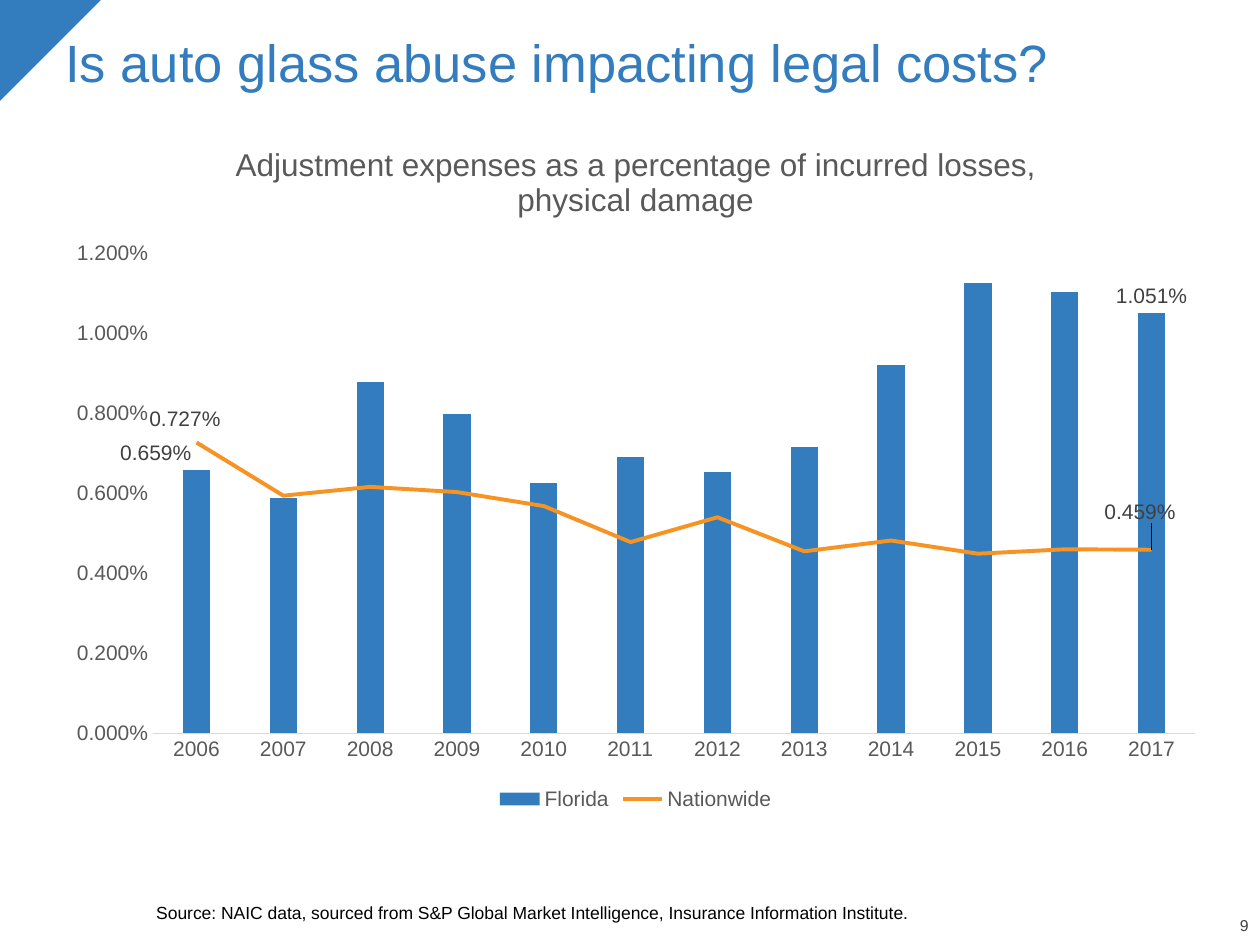
from dataclasses import dataclass

from lxml import etree
from pptx import Presentation
from pptx import util as u
from pptx.chart.data import CategoryChartData
from pptx.dml.color import RGBColor
from pptx.enum import chart as ch
from pptx.enum import shapes, text
from pptx.oxml import parse_xml
from pptx.oxml.ns import nsdecls, qn

BLUE = RGBColor(0x33, 0x7D, 0xBE)
ORANGE = RGBColor(0xF6, 0x93, 0x22)
BLACK = RGBColor(0, 0, 0)
DARK = RGBColor(0x40, 0x40, 0x40)
GREY = RGBColor(0x59, 0x59, 0x59)
PALE = RGBColor(0xD9, 0xD9, 0xD9)
FONT = "Arial"
PERCENT = "0.000%"
WIDTH, HEIGHT = u.Inches(10), u.Inches(7.5)


@dataclass
class Caption:
    words: str
    box: tuple[float, float, float, float]  # inches
    size: float
    color: RGBColor
    anchor: text.MSO_ANCHOR = text.MSO_ANCHOR.BOTTOM
    align: text.PP_ALIGN = text.PP_ALIGN.LEFT
    insets: tuple[float, float] = (0, 0)  # side, top and bottom


@dataclass
class PointLabel:
    series: int
    point: int
    position: ch.XL_LABEL_POSITION
    shift: tuple[float, float]  # shares of the chart's size


CAPTIONS = [
    Caption("9", (9.43, 7.29, 0.48, 0.13), 9, DARK, align=text.PP_ALIGN.RIGHT),
    Caption("Is auto glass abuse impacting legal costs?", (0.42, 0.25, 9.25, 1.04),
            30, BLUE, text.MSO_ANCHOR.TOP, insets=(0.1, 0.05)),
    Caption("Source: NAIC data, sourced from S&P Global Market Intelligence, "
            "Insurance Information Institute.", (1.24, 6.88, 8.4, 0.45), 10, BLACK),
]
YEARS = [str(year) for year in range(2006, 2018)]
EXPENSES = {
    "Florida": [0.00659, 0.00587, 0.00878, 0.00799, 0.00625, 0.00691,
                0.00653, 0.00715, 0.0092, 0.01125, 0.01103, 0.01051],
    "Nationwide": [0.00727, 0.00594, 0.00616, 0.00603, 0.00568, 0.00478,
                   0.0054, 0.00455, 0.00482, 0.00449, 0.0046, 0.00459],
}
OUTSIDE, ABOVE = ch.XL_LABEL_POSITION.OUTSIDE_END, ch.XL_LABEL_POSITION.ABOVE
POINT_LABELS = [
    PointLabel(0, 0, OUTSIDE, (-0.035, 0)),
    PointLabel(0, 11, OUTSIDE, (0, 0)),
    PointLabel(1, 0, ABOVE, (-0.01, -0.01)),
    PointLabel(1, 11, ABOVE, (-0.01, -0.03)),
]


def style_font(font, size: float, color: RGBColor) -> None:
    font.name, font.size, font.bold = FONT, u.Pt(size), False
    font.color.rgb = color


def add_caption(slide, caption: Caption) -> None:
    frame = slide.shapes.add_textbox(*map(u.Inches, caption.box)).text_frame
    frame.word_wrap = True
    frame.vertical_anchor = caption.anchor
    side, edge = map(u.Inches, caption.insets)
    frame.margin_left = frame.margin_right = side
    frame.margin_top = frame.margin_bottom = edge
    frame.text = caption.words
    line = frame.paragraphs[0]
    line.alignment, line.line_spacing = caption.align, 0.9
    style_font(line.runs[0].font, caption.size, caption.color)


def manual_layout(x: float, y: float, size: tuple[float, float] | None = None):
    """Plot-area layout when a size is given, otherwise a label offset."""
    parts = {"x": x, "y": y}
    if size:
        parts = {"layoutTarget": "inner", "xMode": "edge", "yMode": "edge",
                 **parts, "w": size[0], "h": size[1]}
    inner = "".join(f'<c:{tag} val="{val}"/>' for tag, val in parts.items())
    return parse_xml(f"<c:layout {nsdecls('c')}><c:manualLayout>{inner}"
                     "</c:manualLayout></c:layout>")


def move_to_line_plot(bars, ser) -> None:
    """Put a column series into a line plot on the same axes."""
    line_plot = parse_xml(f'<c:lineChart {nsdecls("c")}><c:grouping val="standard"/>'
                          '<c:varyColors val="0"/></c:lineChart>')
    for column_only in ser.findall(qn("c:invertIfNegative")):
        ser.remove(column_only)
    line_plot.append(ser)
    etree.SubElement(line_plot, qn("c:marker")).set("val", "1")
    for axis in bars.findall(qn("c:axId")):
        etree.SubElement(line_plot, qn("c:axId")).set("val", axis.get("val"))
    bars.addnext(line_plot)


def style_axis(axis) -> None:
    axis.has_major_gridlines = False
    axis.major_tick_mark = axis.minor_tick_mark = ch.XL_TICK_MARK.NONE
    style_font(axis.tick_labels.font, 12, GREY)


def add_expense_chart(slide) -> None:
    data = CategoryChartData(number_format=PERCENT)
    data.categories = YEARS
    for name, values in EXPENSES.items():
        data.add_series(name, values)
    chart = slide.shapes.add_chart(
        ch.XL_CHART_TYPE.COLUMN_CLUSTERED,
        *map(u.Inches, (0.42, 0.93, 9.25, 5.54)), data).chart
    style_font(chart.font, 10, BLACK)

    # Title and legend
    chart.has_title = True
    heading = chart.chart_title.text_frame
    heading.text = "Adjustment expenses as a percentage of incurred losses, physical damage"
    style_font(heading.paragraphs[0].runs[0].font, 18, GREY)
    chart.chart_title.include_in_layout = False
    chart.has_legend = True
    chart.legend.position = ch.XL_LEGEND_POSITION.BOTTOM
    chart.legend.include_in_layout = False
    style_font(chart.legend.font, 12, GREY)

    # Axes
    years, share = chart.category_axis, chart.value_axis
    style_axis(years)
    style_axis(share)
    years.format.line.color.rgb, years.format.line.width = PALE, u.Pt(0.75)
    share.format.line.fill.background()
    share.minimum_scale, share.maximum_scale, share.major_unit = 0, 0.012, 0.002
    share.tick_labels.number_format = PERCENT
    share.tick_labels.number_format_is_linked = False

    # Columns for Florida, line for Nationwide
    columns = chart.plots[0]
    columns.gap_width, columns.overlap = 219, -27
    columns.vary_by_categories = False
    bars = columns._element
    move_to_line_plot(bars, bars.findall(qn("c:ser"))[1])
    florida, nationwide = (plot.series[0] for plot in chart.plots)
    florida.format.fill.solid()
    florida.format.fill.fore_color.rgb = BLUE
    nationwide.format.line.color.rgb = ORANGE
    nationwide.format.line.width = u.Pt(2.25)
    nationwide.marker.style = ch.XL_MARKER_STYLE.NONE
    nationwide.smooth = False

    # Plot area
    area = bars.getparent()
    for old in area.findall(qn("c:layout")):
        area.remove(old)
    area.insert(0, manual_layout(0.086, 0.195, (0.894, 0.688)))

    # Labels on the first and last years
    for series in (florida, nationwide):
        series.data_labels.show_value = False
    for spot in POINT_LABELS:
        series = (florida, nationwide)[spot.series]
        label = series.points[spot.point].data_label
        style_font(label.font, 12, DARK)
        label.position = spot.position
        if any(spot.shift):
            entry = next(e for e in series._element.iter(qn("c:dLbl"))
                         if e.find(qn("c:idx")).get("val") == str(spot.point))
            entry.find(qn("c:idx")).addnext(manual_layout(*spot.shift))


def main() -> None:
    deck = Presentation()
    deck.slide_width, deck.slide_height = WIDTH, HEIGHT
    slide = deck.slides.add_slide(deck.slide_layouts[6])

    # Corner triangle
    side = int(WIDTH * 0.08)
    corner = slide.shapes.add_shape(shapes.MSO_SHAPE.RIGHT_TRIANGLE, 0, 0, side, side)
    corner.rotation = 90
    corner.shadow.inherit = False
    corner.fill.solid()
    corner.fill.fore_color.rgb = BLUE
    corner.line.fill.background()

    add_expense_chart(slide)
    for caption in CAPTIONS:
        add_caption(slide, caption)
    deck.save("out.pptx")


if __name__ == "__main__":
    main()
